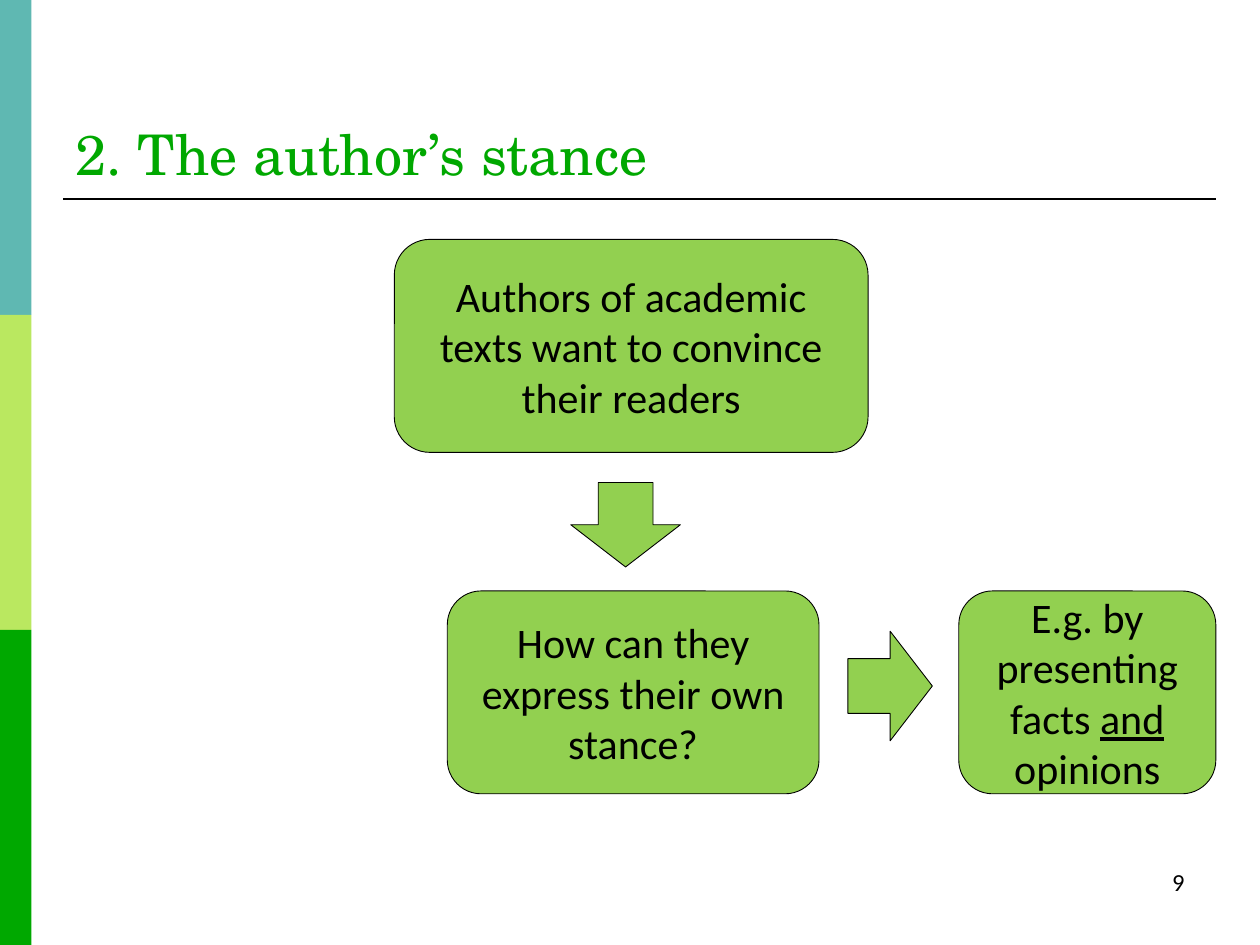
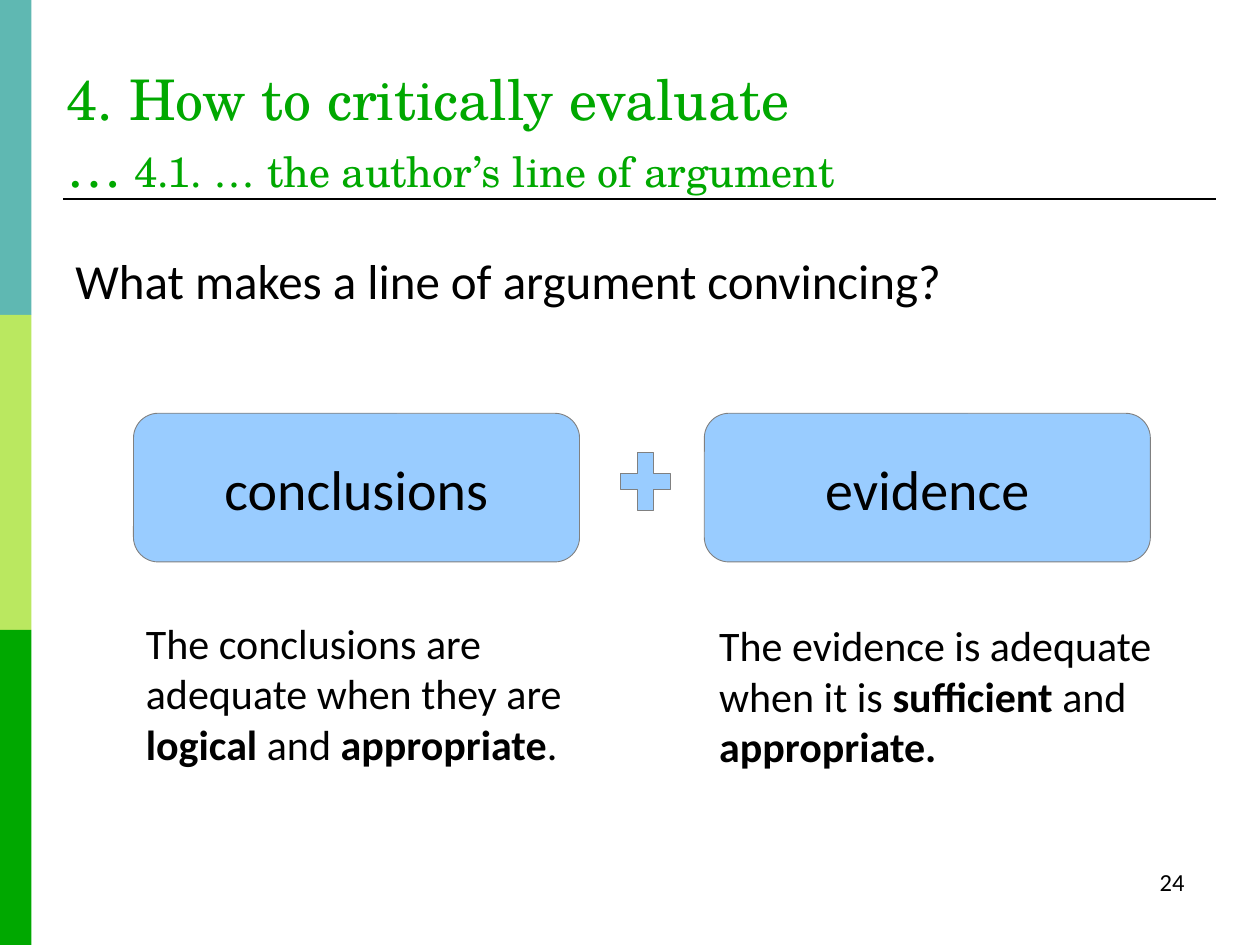
from pptx import Presentation
from pptx.dml.color import RGBColor
from pptx.enum.shapes import MSO_CONNECTOR, MSO_SHAPE
from pptx.enum.text import MSO_ANCHOR, MSO_AUTO_SIZE, PP_ALIGN
from pptx.oxml.ns import qn
from pptx.util import Inches, Pt

RECTANGLE = MSO_SHAPE.RECTANGLE
ROUNDED = MSO_SHAPE.ROUNDED_RECTANGLE
ARROW = MSO_SHAPE.RIGHT_ARROW
PLUS = MSO_SHAPE.MATH_PLUS
STRAIGHT = MSO_CONNECTOR.STRAIGHT
TOP, MIDDLE, BOTTOM = MSO_ANCHOR.TOP, MSO_ANCHOR.MIDDLE, MSO_ANCHOR.BOTTOM
LEFT, CENTER, RIGHT = PP_ALIGN.LEFT, PP_ALIGN.CENTER, PP_ALIGN.RIGHT
NO_AUTOFIT = MSO_AUTO_SIZE.NONE

TITLE_FONT, BODY_FONT = "TeX Gyre Schola", "Calibri"
BLACK, GREEN = "000000", "00A800"
BAND_COLORS = ["5FB8B2", "BAE860", GREEN]
STANCE_COLORS = ("92D050", BLACK)
ARGUMENT_COLORS = ("99CCFF", "808080")
TITLE_ONLY = 5


def rgb(value):
    return RGBColor.from_string(value)


def box(left, top, width, height):
    return [Inches(length) for length in (left, top, width, height)]


class Deck:
    def __init__(self):
        self.presentation = Presentation()
        self.presentation.slide_width = Inches(10)
        self.presentation.slide_height = Inches(7.5)
        self.slide = None

    def new_slide(self, number, title_runs, title_box):
        layout = self.presentation.slide_layouts[TITLE_ONLY]
        self.slide = self.presentation.slides.add_slide(layout)
        for index, color in enumerate(BAND_COLORS):
            self.shape(RECTANGLE, (0, 2.5 * index, 0.25, 2.5), (color, None))
        self.rule(0.5, 9.65, 1.58)
        self.title(title_runs, title_box)
        self.text([(str(number), {})], (7.17, 6.83, 2.33, 0.5), 14, RIGHT)

    def fill_text(self, shape, runs, size, align=LEFT, anchor=TOP,
                  font=BODY_FONT, color=BLACK):
        frame = shape.text_frame
        frame.word_wrap = True
        frame.auto_size = NO_AUTOFIT
        frame.vertical_anchor = anchor
        paragraph = frame.paragraphs[0]
        paragraph.alignment = align
        for content, style in runs:
            run = paragraph.add_run()
            run.text = content
            run.font.name = font
            run.font.size = Pt(style.get("size", size))
            run.font.bold = style.get("bold", False)
            run.font.underline = style.get("underline", False)
            run.font.color.rgb = rgb(color)

    def title(self, runs, place):
        title = self.slide.shapes.title
        title.left, title.top, title.width, title.height = box(*place)
        self.fill_text(title, runs, 32, LEFT, BOTTOM, TITLE_FONT, GREEN)

    def text(self, runs, place, size, align=LEFT):
        text_box = self.slide.shapes.add_textbox(*box(*place))
        self.fill_text(text_box, runs, size, align)

    def shape(self, kind, place, colors, rotation=0):
        fill, line = colors
        shape = self.slide.shapes.add_shape(kind, *box(*place))
        shape.shadow.inherit = False
        shape.rotation = rotation
        shape.fill.solid()
        shape.fill.fore_color.rgb = rgb(fill)
        if line:
            shape.line.color.rgb = rgb(line)
            shape.line.width = Pt(0.5)
        else:
            shape.line.fill.background()
        return shape

    def card(self, runs, place, colors, size):
        shape = self.shape(ROUNDED, place, colors)
        self.fill_text(shape, runs, size, CENTER, MIDDLE)

    def rule(self, left, right, height):
        line = self.slide.shapes.add_connector(
            STRAIGHT, Inches(left), Inches(height), Inches(right), Inches(height))
        line.line.color.rgb = rgb(BLACK)
        line.line.width = Pt(1.5)
        properties = line._element.spPr
        properties.append(properties.makeelement(qn("a:effectLst"), {}))


def stance_slide(deck):
    deck.new_slide(9, [("2. The author’s stance", {})], (0.5, 0.28, 6.36, 1.25))
    cards = [
        ([("Authors of academic texts want to convince their readers", {})],
         (3.13, 1.9, 3.76, 1.69)),
        ([("How can they express their own stance?", {})],
         (3.55, 4.69, 2.95, 1.61)),
        ([("E.g. by presenting facts ", {}), ("and", {"underline": True}),
          (" opinions", {})],
         (7.61, 4.69, 2.04, 1.61)),
    ]
    for runs, place in cards:
        deck.card(runs, place, STANCE_COLORS, 24)
    for left, top, rotation in [(4.63, 3.73, 90), (6.73, 5.01, 0)]:
        deck.shape(ARROW, (left, top, 0.67, 0.87), STANCE_COLORS, rotation)


def argument_slide(deck):
    bold = {"bold": True}
    deck.new_slide(
        24,
        [("4. How to critically evaluate …", {}),
         (" 4.1. … the author’s line of argument", {"size": 24})],
        (0.43, 0.38, 6.31, 1.25))
    deck.text([("What makes a line of argument convincing?", {})],
              (0.5, 1.94, 9.15, 0.6), 28)
    for label, left in [("conclusions", 1.06), ("evidence", 5.59)]:
        deck.card([(label, {})], (left, 3.28, 3.54, 1.18), ARGUMENT_COLORS, 32)
    deck.shape(PLUS, (4.85, 3.51, 0.54, 0.62), ARGUMENT_COLORS)
    deck.text([("The conclusions are adequate when they are ", {}),
               ("logical", bold), (" and ", {}), ("appropriate", bold), (".", {})],
              (1.06, 4.85, 3.54, 1.62), 24)
    deck.text([("The evidence is adequate when it is ", {}),
               ("sufficient ", bold), ("and ", {}), ("appropriate.", bold)],
              (5.61, 4.87, 3.9, 1.62), 24)


def main():
    deck = Deck()
    stance_slide(deck)
    argument_slide(deck)
    deck.presentation.save("out.pptx")


if __name__ == "__main__":
    main()
